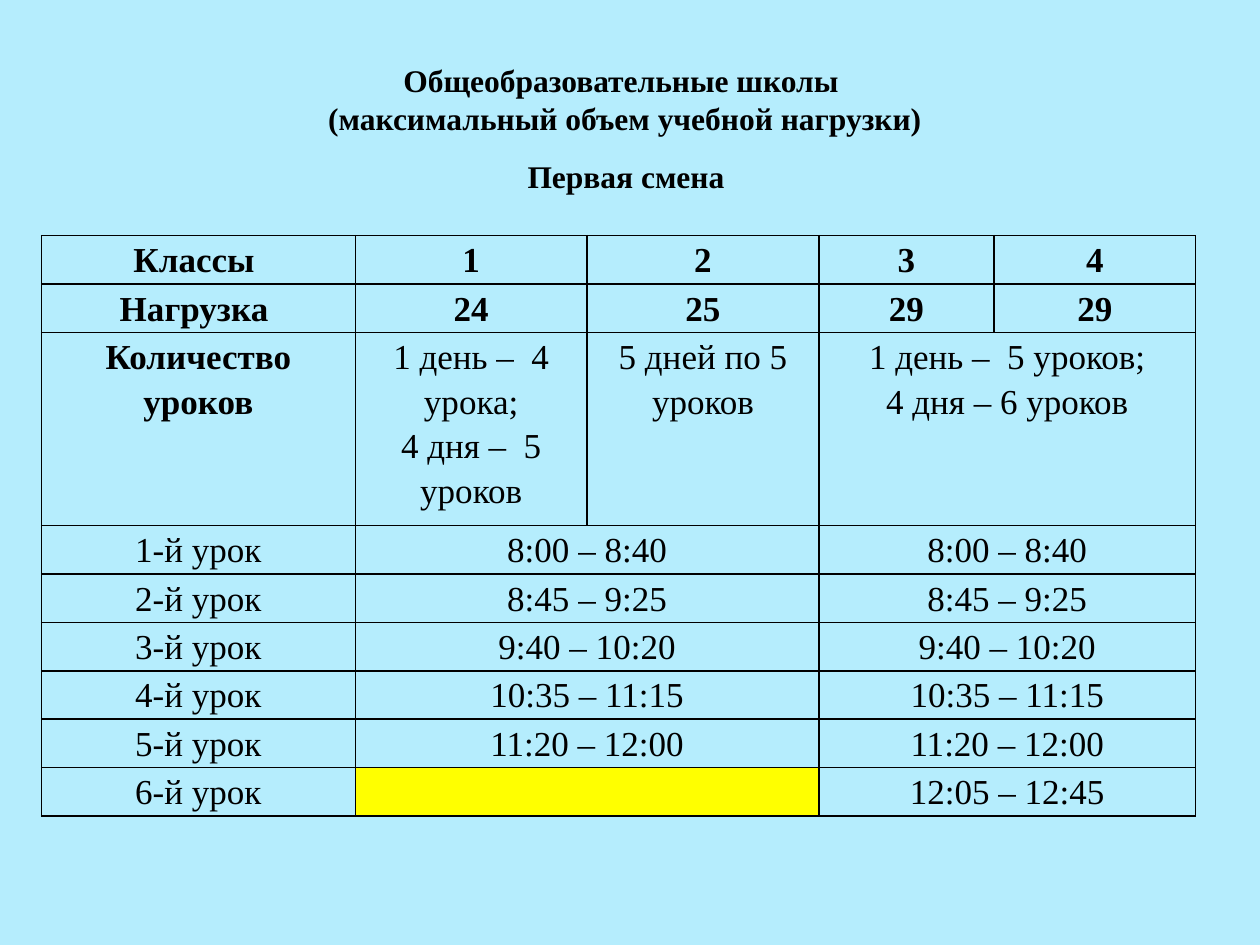
import dataclasses
import typing

import pptx
import pptx.dml.color
import pptx.enum.text
import pptx.oxml
import pptx.oxml.ns
import pptx.util

Inches = pptx.util.Inches
Pt = pptx.util.Pt
RGBColor = pptx.dml.color.RGBColor
Align = pptx.enum.text.PP_ALIGN
Anchor = pptx.enum.text.MSO_ANCHOR
Fit = pptx.enum.text.MSO_AUTO_SIZE

SKY = RGBColor(0xB5, 0xED, 0xFD)
BLACK = RGBColor(0, 0, 0)
YELLOW = RGBColor(0xFF, 0xFF, 0)
FONT = "Times New Roman"

COLS = [2.49, 1.84, 1.84, 1.39, 1.6]
LOW, HIGH = 0.384, 1.53


@dataclasses.dataclass
class Item:
    text: str
    span: int = 1
    bold: bool = False
    fill: typing.Optional[RGBColor] = None


@dataclasses.dataclass
class Row:
    items: list[Item]
    height: float = LOW


def style(frame: typing.Any, size: int, bold: bool) -> None:
    for para in frame.paragraphs:
        para.alignment = Align.CENTER
        font = para.font
        font.name, font.size, font.bold = FONT, Pt(size), bold
        font.color.rgb = BLACK


def head(shape: typing.Any, text: str, box: tuple, wrap: bool) -> None:
    shape.left, shape.top, shape.width, shape.height = map(Inches, box)
    frame = shape.text_frame
    frame.text = text
    frame.word_wrap = wrap
    frame.auto_size = Fit.SHAPE_TO_FIT_TEXT
    frame.vertical_anchor = Anchor.MIDDLE
    style(frame, 18, True)


def edge(cell: typing.Any) -> None:
    """Rule all four sides with a 1 pt line."""
    for at, side in enumerate("LRTB"):
        line = pptx.oxml.parse_xml(
            f'<a:ln{side} {pptx.oxml.ns.nsdecls("a")} w="{Pt(1)}">'
            f'<a:solidFill><a:srgbClr val="{BLACK}"/></a:solidFill></a:ln{side}>')
        cell._tc.get_or_add_tcPr().insert(at, line)


def put(cell: typing.Any, item: Item) -> None:
    cell.margin_left = cell.margin_right = Inches(0.05)
    cell.margin_top = cell.margin_bottom = 0
    cell.text = item.text
    style(cell.text_frame, 20, item.bold)
    for para in cell.text_frame.paragraphs:
        para.line_spacing = 1.15
    if item.fill is not None:
        cell.fill.solid()
        cell.fill.fore_color.rgb = item.fill


def grid(slide: typing.Any, rows: list[Row]) -> None:
    high = sum(row.height for row in rows)
    frame = slide.shapes.add_table(
        len(rows), len(COLS), Inches(0.33), Inches(1.87),
        Inches(sum(COLS)), Inches(high))
    table = frame.table
    table.first_row = table.horz_banding = False
    for col, width in zip(table.columns, COLS):
        col.width = Inches(width)
    for cell in table.iter_cells():
        cell.fill.background()
        edge(cell)
    for r, row in enumerate(rows):
        table.rows[r].height = Inches(row.height)
        c = 0
        for item in row.items:
            cell = table.cell(r, c)
            c += item.span
            if item.span > 1:
                cell.merge(table.cell(r, c - 1))
            put(cell, item)


def main() -> None:
    deck = pptx.Presentation()
    deck.slide_width, deck.slide_height = Inches(10), Inches(7.5)
    slide = deck.slides.add_slide(deck.slide_layouts[5])
    slide.background.fill.solid()
    slide.background.fill.fore_color.rgb = SKY

    # Headings
    head(slide.shapes.title,
         "Общеобразовательные школы \n(максимальный объем учебной нагрузки)",
         (2.48, 0.43, 4.96, 0.71), False)
    head(slide.shapes.add_textbox(0, 0, 0, 0), "Первая смена ",
         (0, 1.2, 10, 0.4), True)

    # Classes, load and number of lessons
    tops = [["Классы ", "1", "2", "3", "4"],
            ["Нагрузка ", "24", "25", "29", "29"]]
    rows = [Row([Item(text, bold=True) for text in top]) for top in tops]
    rows.append(Row([
        Item("Количество уроков", bold=True),
        Item("1 день –  4 урока;\n4 дня –  5 уроков"),
        Item("5 дней по 5 уроков"),
        Item("1 день –  5 уроков;\n4 дня – 6 уроков", 2)], HIGH))

    # Lesson times; the younger classes have no sixth lesson
    times = ["8:00 – 8:40", "8:45 – 9:25", "9:40 – 10:20",
             "10:35 – 11:15", "11:20 – 12:00", "12:05 – 12:45"]
    for n, time in enumerate(times, 1):
        young = Item(time, 2) if n < 6 else Item("", 2, fill=YELLOW)
        rows.append(Row([Item(f"{n}-й урок"), young, Item(time, 2)]))
    grid(slide, rows)

    deck.save("out.pptx")


if __name__ == "__main__":
    main()
